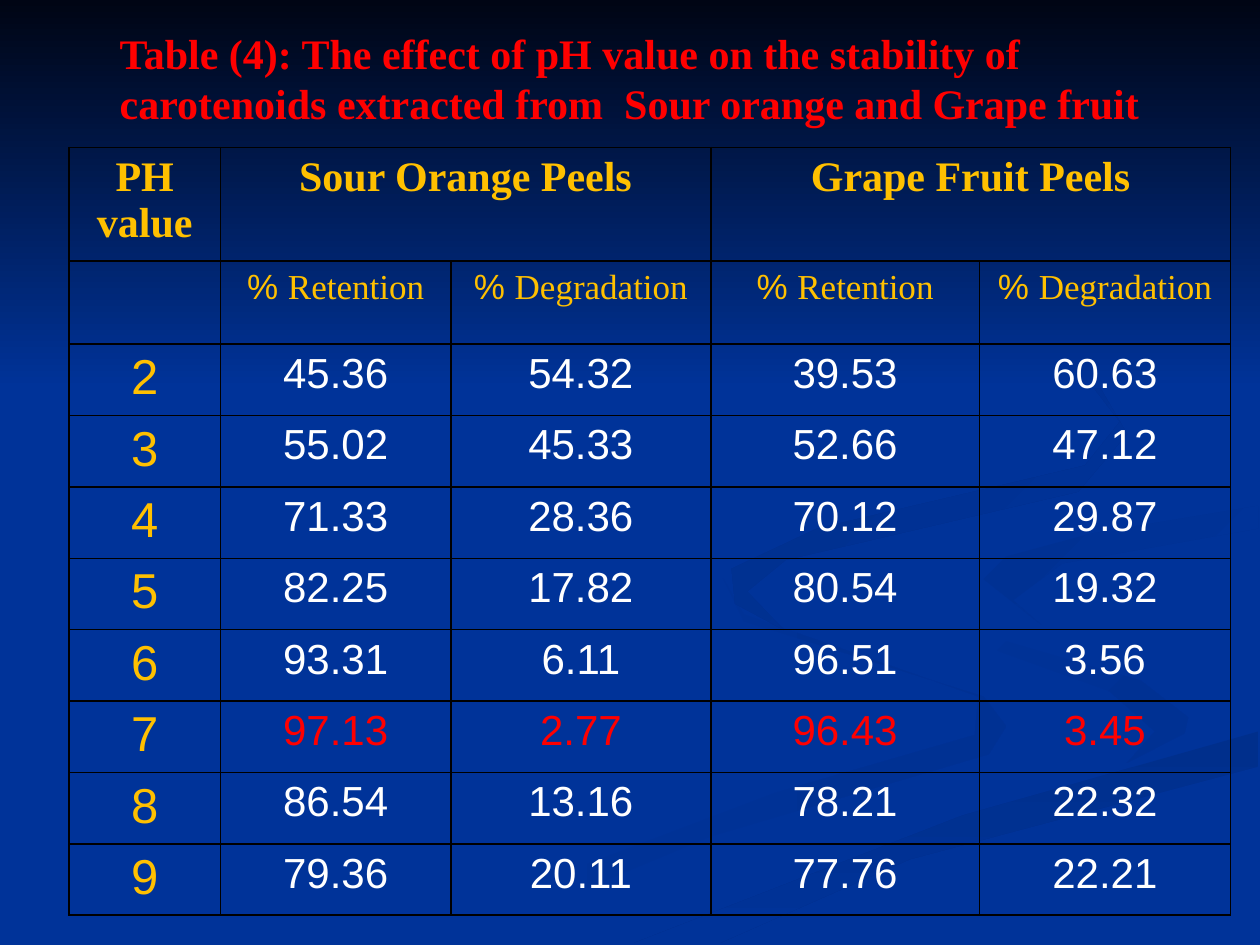
from lxml.etree import SubElement
from pptx import Presentation
from pptx.dml.color import RGBColor
from pptx.enum.shapes import MSO_SHAPE
from pptx.enum.text import MSO_ANCHOR, MSO_AUTO_SIZE, PP_ALIGN
from pptx.oxml.ns import qn
from pptx.util import Pt

BLUE = RGBColor(0x00, 0x33, 0x99)
SWIRL_BLUE = RGBColor(0x00, 0x31, 0x93)
BAND_BLUE = RGBColor(0x00, 0x2F, 0x8C)
NIGHT = RGBColor(0x00, 0x05, 0x14)
RED = RGBColor(0xFF, 0x00, 0x00)
GOLD = RGBColor(0xFF, 0xC0, 0x00)
WHITE = RGBColor(0xFF, 0xFF, 0xFF)
BORDER_HEX = "000000"
SERIF = "Times New Roman"
SANS = "Arial"

presentation = Presentation()
presentation.slide_width, presentation.slide_height = Pt(720), Pt(540)
slide = presentation.slides.add_slide(presentation.slide_layouts[5])
slide.background.fill.solid()
slide.background.fill.fore_color.rgb = BLUE


def fill_gradient(shape, start_color, end_color, angle):
    shape.shadow.inherit = False
    shape.line.fill.background()
    shape.fill.gradient()
    shape.fill.gradient_angle = angle
    for position, (stop, color) in enumerate(zip(shape.fill.gradient_stops, (start_color, end_color))):
        stop.color.rgb = color
        stop.position = position


def write_text(paragraph, text, color, **formats):
    run = paragraph.add_run()
    run.text = text
    run.font.color.rgb = color
    for name, value in formats.items():
        setattr(run.font, name, value)
    return run


# Background swirls: outline in points, start colour, end colour, angle
SWIRLS = [
    ([(562, 398), (425, 355), (413, 330), (425, 351), (559, 398), (557, 420),
      (443, 453), (216, 539), (260, 539), (406, 478), (565, 431), (575, 415)],
     BLUE, SWIRL_BLUE, 0),
    ([(679, 410), (652, 389), (546, 358), (521, 334), (537, 360), (634, 395),
      (660, 418), (644, 436), (677, 419)],
     BLUE, SWIRL_BLUE, 315),
    ([(362, 539), (411, 539), (520, 491), (719, 438), (719, 418), (550, 466)],
     BAND_BLUE, BLUE, 270),
    ([(562, 331), (595, 357), (579, 343), (607, 322), (719, 302), (719, 289),
      (623, 305), (575, 318)],
     SWIRL_BLUE, BLUE, 315),
    ([(492, 310), (616, 281), (644, 248), (622, 210), (549, 168), (609, 201),
      (640, 241), (620, 266), (467, 302), (418, 325), (420, 345), (448, 360),
      (427, 338), (449, 320)],
     BAND_BLUE, BLUE, 315),
]
for outline, start_color, end_color, angle in SWIRLS:
    builder = slide.shapes.build_freeform(*outline[0], scale=Pt(1))
    builder.add_line_segments(outline[1:], close=True)
    fill_gradient(builder.convert_to_shape(), start_color, end_color, angle)

# Dark fade across the top
fade = slide.shapes.add_shape(MSO_SHAPE.RECTANGLE, 0, 0, Pt(720), Pt(222))
fill_gradient(fade, NIGHT, BLUE, 270)

# Title, brought in front of the backdrop
title = slide.shapes.title
slide.shapes._spTree.append(title._element)
title.left, title.top, title.width, title.height = Pt(50.4), Pt(11.5), Pt(632), Pt(62)
frame_formats = {
    "margin_left": Pt(18), "margin_top": Pt(3.6), "margin_right": Pt(1.4), "margin_bottom": 0,
    "vertical_anchor": MSO_ANCHOR.MIDDLE, "word_wrap": True, "auto_size": MSO_AUTO_SIZE.NONE,
}
for name, value in frame_formats.items():
    setattr(title.text_frame, name, value)
title_paragraph = title.text_frame.paragraphs[0]
title_paragraph.alignment = PP_ALIGN.LEFT
write_text(title_paragraph,
           "Table (4): The effect of pH value on the stability of carotenoids "
           "extracted from  Sour orange and Grape fruit",
           RED, name=SERIF, size=Pt(24), bold=True)

# Table of retention and degradation by pH
MEASURES = ["Retention %", "Degradation %"]
FIRST_PH = 2
HIGHLIGHTED_PH = "7"
RESULTS = [
    ["45.36", "54.32", "39.53", "60.63"],
    ["55.02", "45.33", "52.66", "47.12"],
    ["71.33", "28.36", "70.12", "29.87"],
    ["82.25", "17.82", "80.54", "19.32"],
    ["93.31", "6.11", "96.51", "3.56"],
    ["97.13", "2.77", "96.43", "3.45"],
    ["86.54", "13.16", "78.21", "22.32"],
    ["79.36", "20.11", "77.76", "22.21"],
]
rows = [["PH value", "Sour Orange Peels", "", "Grape Fruit Peels", ""], [""] + MEASURES * 2]
rows += [[str(ph)] + results for ph, results in enumerate(RESULTS, FIRST_PH)]
COLUMN_WIDTHS = [86.4, 131.8, 148.5, 153.5, 143.5]
ROW_HEIGHTS = [64.8, 47.5] + [40.8] * len(RESULTS)

table = slide.shapes.add_table(len(rows), len(COLUMN_WIDTHS), Pt(39.5), Pt(84.4),
                               Pt(sum(COLUMN_WIDTHS)), Pt(sum(ROW_HEIGHTS))).table
table.first_row = table.horz_banding = False
for column, width in zip(table.columns, COLUMN_WIDTHS):
    column.width = Pt(width)
for row, height in zip(table.rows, ROW_HEIGHTS):
    row.height = Pt(height)
for first in (1, 3):
    table.cell(0, first).merge(table.cell(0, first + 1))

for row_index, values in enumerate(rows):
    for column_index, text in enumerate(values):
        cell = table.cell(row_index, column_index)
        properties = cell._tc.get_or_add_tcPr()
        for side in ("a:lnL", "a:lnR", "a:lnT", "a:lnB"):
            border = SubElement(properties, qn(side), w=str(Pt(1)))
            SubElement(SubElement(border, qn("a:solidFill")), qn("a:srgbClr"), val=BORDER_HEX)
        cell.fill.background()
        if not text:
            continue
        if row_index == 0:
            size, color = 24, GOLD
        elif row_index == 1:
            size, color = 20, GOLD
        elif column_index == 0:
            size, color = 28, GOLD
        else:
            size, color = 24, RED if values[0] == HIGHLIGHTED_PH else WHITE
        paragraph = cell.text_frame.paragraphs[0]
        paragraph.alignment = PP_ALIGN.CENTER
        # Right-to-left text: digits and signs take the complex-script font
        paragraph._p.get_or_add_pPr().set("rtl", "1")
        run = write_text(paragraph, text, color, name=SERIF, size=Pt(size), bold=row_index == 0)
        SubElement(run._r.get_or_add_rPr(), qn("a:cs"), typeface=SANS)

presentation.save("out.pptx")
